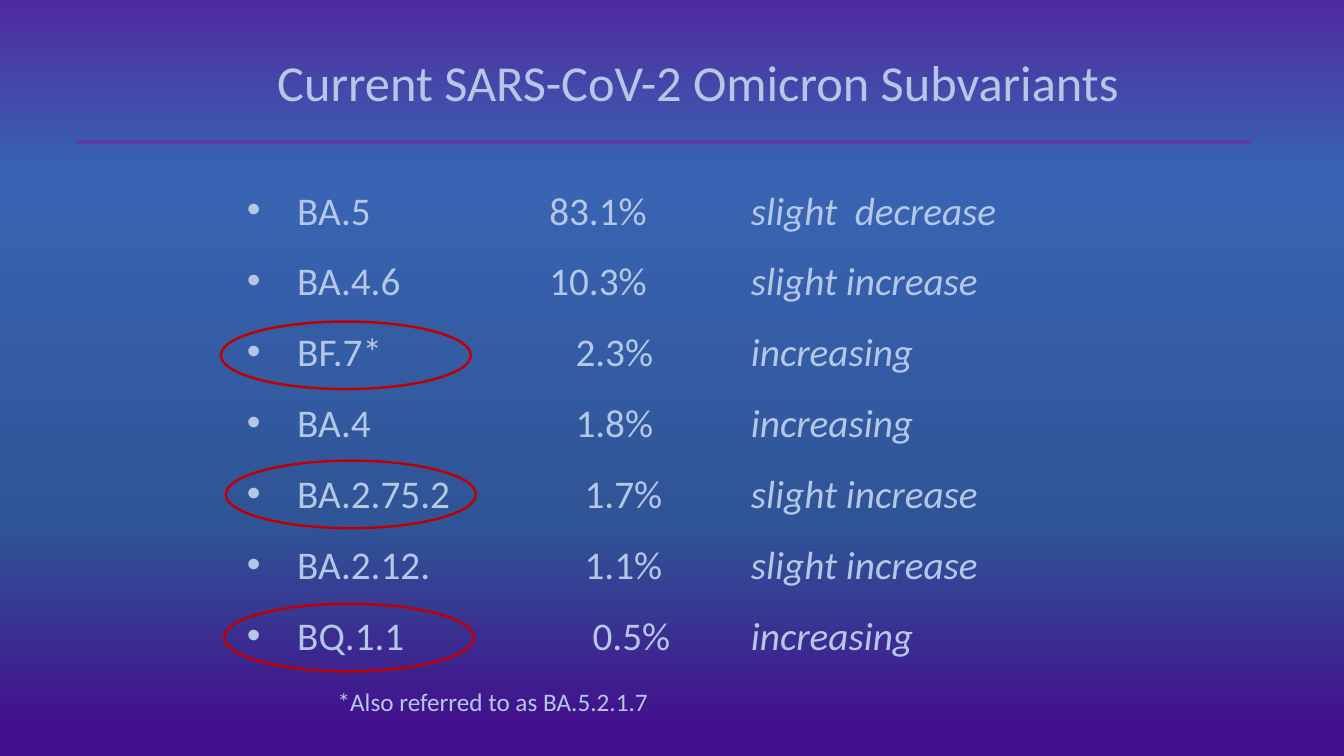
from lxml import etree
from pptx import Presentation
from pptx.dml.color import RGBColor
from pptx.enum.shapes import MSO_CONNECTOR, MSO_SHAPE
from pptx.enum.text import MSO_AUTO_SIZE, PP_ALIGN
from pptx.oxml.ns import qn
from pptx.util import Inches, Pt

STRAIGHT = MSO_CONNECTOR.STRAIGHT
OVAL = MSO_SHAPE.OVAL
CENTER = PP_ALIGN.CENTER
GROW = MSO_AUTO_SIZE.SHAPE_TO_FIT_TEXT
PALE_BLUE, PURPLE, RED = "B4C7E7", "7030A0", "C00000"


def rgb(value):
    return RGBColor.from_string(value)


def add_text(box, paragraphs, size, align=None, line=None, after=None,
             indent=0, hanging=0, bullet=None):
    """Each paragraph is (tab stops in inches, [(text, italic), ...])."""
    frame = slide.shapes.add_textbox(*map(Inches, box)).text_frame
    frame.word_wrap = True
    frame.auto_size = GROW
    for i, (tabs, runs) in enumerate(paragraphs):
        paragraph = frame.add_paragraph() if i else frame.paragraphs[0]
        paragraph.alignment = align
        paragraph.line_spacing = line
        paragraph.space_after = after
        props = paragraph._p.get_or_add_pPr()
        props.set("marL", str(Inches(indent)))
        props.set("indent", str(Inches(-hanging)))
        if bullet:
            etree.SubElement(props, qn("a:buFont"), typeface="Arial")
            etree.SubElement(props, qn("a:buChar"), char=bullet)
        if tabs:
            tab_list = etree.SubElement(props, qn("a:tabLst"))
            for stop in tabs:
                etree.SubElement(tab_list, qn("a:tab"), pos=str(Inches(stop)), algn="l")
        for text, italic in runs:
            run = paragraph.add_run()
            run.text = text
            run.font.name = "Calibri"
            run.font.size = Pt(size)
            run.font.italic = italic
            run.font.color.rgb = rgb(PALE_BLUE)


presentation = Presentation()
presentation.slide_width = Inches(13.33)
presentation.slide_height = Inches(7.5)
slide = presentation.slides.add_slide(presentation.slide_layouts[6])

# Background gradient, top to bottom
background = slide.background.fill
background.gradient()
background.gradient_angle = 270
stops = slide._element.find(".//" + qn("a:gsLst"))
stops.clear()
for percent, color in [(0, "502BA0"), (23, "3864B3"), (69, "2F5597"), (97, "430E8C")]:
    stop = etree.SubElement(stops, qn("a:gs"), pos=str(percent * 1000))
    etree.SubElement(stop, qn("a:srgbClr"), val=color)

# Title
add_text((1.99, 0.61, 9.37, 0.58),
         [((), [("Current SARS-CoV-2 Omicron Subvariants", False)])],
         size=36, align=CENTER, line=Pt(32.6), after=Pt(6), indent=0.5)

# Subvariants: name, share, position of the share, trend
TREND_TAB = 5
subvariants = [
    ("BA.5", "83.1%", 3, "slight  decrease"),
    ("BA.4.6", "10.3%", 3, "slight increase"),
    ("BF.7*", "2.3%", 3.26, "increasing"),
    ("BA.4", "1.8%", 3.26, "increasing"),
    ("BA.2.75.2", "1.7%", 3.35, "slight increase"),
    ("BA.2.12.", "1.1%", 3.35, "slight increase"),
    ("BQ.1.1", "0.5%", 3.43, "increasing"),
]
rows = [((share_tab, TREND_TAB), [(f"{name}\t{share}\t", False), (trend, True)])
        for name, share, share_tab, trend in subvariants]
add_text((2.35, 1.81, 8.64, 5.57), rows, size=28, line=Pt(32.6), after=Pt(18),
         indent=0.5, hanging=0.5, bullet="•")

# Rule under the title
rule = slide.shapes.add_connector(STRAIGHT, Inches(0.76), Inches(1.41),
                                  Inches(12.41), Inches(1.41))
rule.line.color.rgb = rgb(PURPLE)
rule.line.width = Pt(2.75)
rule_color = rule._element.spPr.find(".//" + qn("a:srgbClr"))
etree.SubElement(rule_color, qn("a:alpha"), val="68000")
etree.SubElement(rule._element.spPr, qn("a:effectLst"))

# Footnote
add_text((3.25, 6.76, 3.62, 0.4),
         [((), [("*Also referred to as BA.5.2.1.7", False)])], size=18)

# Rings around the subvariants to watch
for left, top in [(2.22, 5.99), (2.24, 4.57), (2.19, 3.19)]:
    ring = slide.shapes.add_shape(OVAL, Inches(left), Inches(top), Inches(2.48), Inches(0.67))
    ring.shadow.inherit = False
    ring.fill.background()
    ring.line.color.rgb = rgb(RED)
    ring.line.width = Pt(1.75)

presentation.save("out.pptx")
